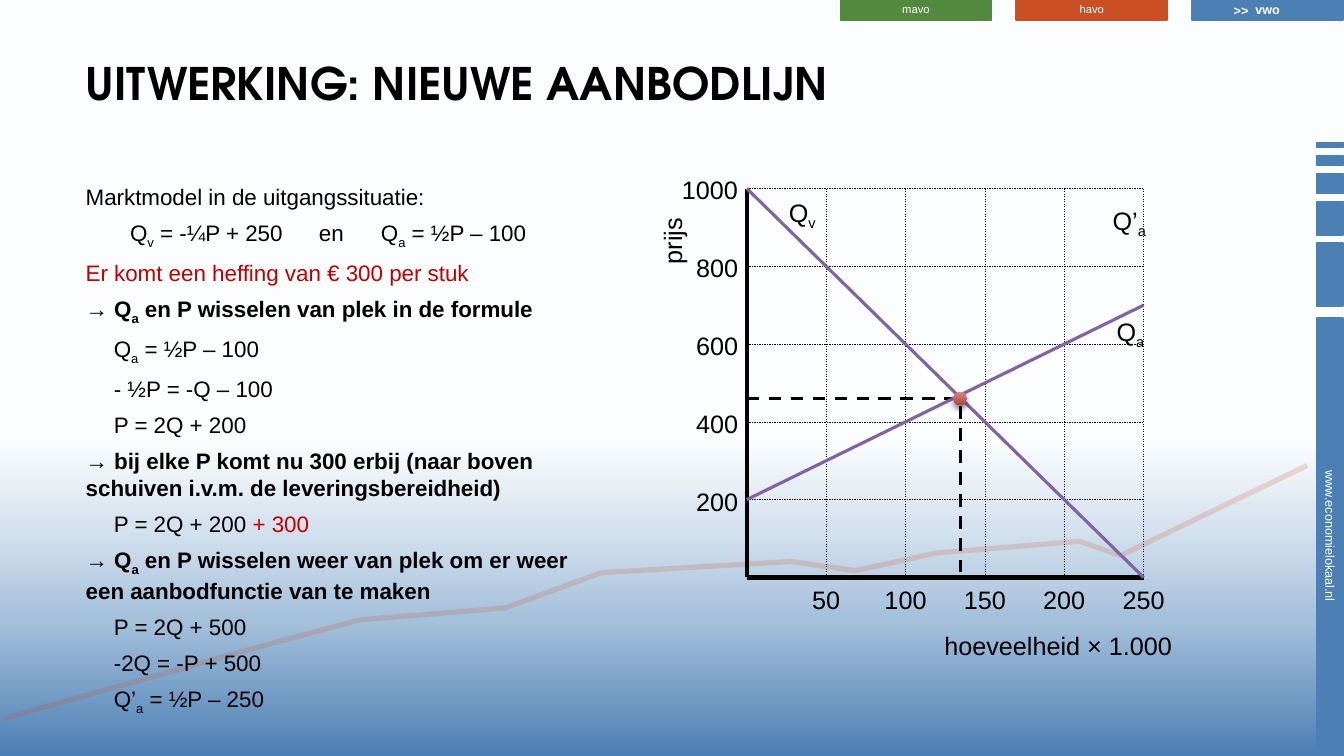
from lxml.etree import SubElement
from pptx import Presentation
from pptx.dml.color import RGBColor
from pptx.enum.dml import MSO_LINE
from pptx.enum.shapes import MSO_CONNECTOR, MSO_SHAPE
from pptx.enum.text import MSO_ANCHOR, PP_ALIGN
from pptx.oxml.ns import qn
from pptx.util import Cm, Pt

BLACK, WHITE, RED = "000000", "FFFFFF", "C00000"
BLUE, ORANGE, GREEN, PURPLE = "4C7FB4", "CA4F22", "52893F", "8064A2"

PLOT_LEFT, PLOT_BOTTOM, PLOT_WIDTH, PLOT_HEIGHT = 18.82, 14.55, 10, 9.8
MAX_QUANTITY, MAX_PRICE = 250, 1000
EQUILIBRIUM = (134.5, 460)

TREND = [(32.94, 11.73), (28.24, 14), (27.2, 13.64), (23.57, 13.94),
         (21.56, 14.38), (19.94, 14.15), (15.16, 14.43), (12.73, 15.32),
         (9.07, 15.62), (6.86, 16.21), (0.08, 18.11)]

# Each paragraph: tab stops in cm, bold, and its (text, colour) parts
INDENT = [0.71]
SOLUTION = [
    ([], False, [("Marktmodel in de uitgangssituatie:", BLACK)]),
    ([1.12, 5.88, 7.44], False,
     [("\tQ|v| = -¼P + 250\ten\tQ|a| = ½P – 100", BLACK)]),
    ([], False, [("Er komt een heffing van € 300 per stuk", RED)]),
    ([], True, [("→ Q|a| en P wisselen van plek in de formule", BLACK)]),
    (INDENT, False, [("\tQ|a| = ½P – 100", BLACK)]),
    (INDENT, False, [("\t- ½P = -Q – 100", BLACK)]),
    (INDENT, False, [("\tP = 2Q + 200", BLACK)]),
    ([], True, [("→ bij elke P komt nu 300 erbij (naar boven schuiven "
                 "i.v.m. de leveringsbereidheid)", BLACK)]),
    (INDENT, False, [("\tP = 2Q + 200 ", BLACK), ("+ 300", RED)]),
    ([], True, [("→ Q|a| en P wisselen weer van plek om er weer een "
                 "aanbodfunctie van te maken", BLACK)]),
    (INDENT, False, [("\tP = 2Q + 500", BLACK)]),
    (INDENT, False, [("\t-2Q = -P + 500", BLACK)]),
    (INDENT, False, [("\tQ’|a| = ½P – 250", BLACK)]),
]


def rgb(color):
    return RGBColor.from_string(color)


def set_gradient(fill, element, stops, angle):
    """Fill with (percent, colour) stops; the angle runs counter-clockwise."""
    fill.gradient()
    fill.gradient_angle = angle
    stop_list = next(element.iter(qn("a:gsLst")))
    for old in list(stop_list):
        stop_list.remove(old)
    for percent, color in stops:
        stop = SubElement(stop_list, qn("a:gs"), pos=str(percent * 1000))
        SubElement(stop, qn("a:srgbClr"), val=color)


def add_rich_text(p, text, size, color=BLACK, bold=False, font="Arial"):
    """Add runs; every second piece between bars is a subscript."""
    for i, piece in enumerate(text.split("|")):
        r = p.add_run()
        r.text = piece
        r.font.size, r.font.name, r.font.bold = Pt(size), font, bold
        r.font.color.rgb = rgb(color)
        if i % 2:
            r.font._element.set("baseline", "-25000")


def add_label(s, left, top, width, height, text, size=18, align=PP_ALIGN.LEFT,
              **style):
    box = s.shapes.add_textbox(Cm(left), Cm(top), Cm(width), Cm(height))
    box.text_frame.word_wrap = False
    p = box.text_frame.paragraphs[0]
    p.alignment = align
    add_rich_text(p, text, size, **style)
    return box


def add_bar(s, left, top, width, height, color, text="", size=9, bold=False):
    sp = s.shapes.add_shape(MSO_SHAPE.RECTANGLE, Cm(left), Cm(top), Cm(width),
                            Cm(height))
    sp.shadow.inherit = False
    sp.fill.solid()
    sp.fill.fore_color.rgb = sp.line.color.rgb = rgb(color)
    sp.line.width = Pt(1.25)
    if text:
        tf = sp.text_frame
        tf.margin_top, tf.margin_bottom = 0, Cm(0.03)
        tf.vertical_anchor = MSO_ANCHOR.MIDDLE
        tf.paragraphs[0].alignment = PP_ALIGN.CENTER
        add_rich_text(tf.paragraphs[0], text, size, WHITE, bold)
    return sp


def plot_point(quantity, price):
    return (PLOT_LEFT + quantity / MAX_QUANTITY * PLOT_WIDTH,
            PLOT_BOTTOM - price / MAX_PRICE * PLOT_HEIGHT)


def add_plot_line(s, start, end, color, width, dashed=False):
    """Draw a line between two (quantity, price) points."""
    ends = [Cm(v) for v in plot_point(*start) + plot_point(*end)]
    line = s.shapes.add_connector(MSO_CONNECTOR.STRAIGHT, *ends)
    line.line.color.rgb = rgb(color)
    line.line.width = Pt(width)
    if dashed:
        line.line.dash_style = MSO_LINE.DASH
    SubElement(line.element.spPr, qn("a:effectLst"))


def add_trend(s):
    points = [(Cm(x), Cm(y)) for x, y in TREND]
    builder = s.shapes.build_freeform(*points[0])
    builder.add_line_segments(points[1:], close=False)
    sp = builder.convert_to_shape()
    sp.shadow.inherit = False
    sp.fill.background()
    sp.line.color.rgb = rgb(ORANGE)
    sp.line.width = Pt(3.75)
    color = next(sp.element.spPr.iter(qn("a:srgbClr")))
    SubElement(color, qn("a:alpha"), val="19000")


def add_frame(s):
    """Draw the school-level tabs, the side bars and the trend line."""
    tabs = [("mavo", GREEN, 8, False), ("havo", ORANGE, 8, False),
            ("vwo", BLUE, 9, True)]
    for i, (text, color, size, bold) in enumerate(tabs):
        add_bar(s, 21.18 + 4.43 * i, 0, 3.81, 0.51, color, text, size, bold)
    top = 3.59
    for height in (0.13, 0.25, 0.51, 0.84, 1.6):
        add_bar(s, 33.18, top, 0.66, height, BLUE)
        top += height + 0.2
    address = add_bar(s, 28.01, 13.18, 11, 0.66, BLUE, "www.economielokaal.nl")
    address.rotation = 90
    add_trend(s)
    add_label(s, 30.84, -0.05, 0.9, 0.64, ">>", 9, color=WHITE, bold=True)


def add_solution(s):
    box = s.shapes.add_textbox(Cm(1.91), Cm(4.5), Cm(13.72), Cm(14))
    tf = box.text_frame
    tf.word_wrap = True
    for i, (tabs, bold, parts) in enumerate(SOLUTION):
        p = tf.paragraphs[0]
        if i:
            p = tf.add_paragraph()
            p.space_before = Pt(3.2)
        p.space_after = Pt(3.4)
        if tabs:
            tab_list = SubElement(p._p.get_or_add_pPr(), qn("a:tabLst"))
            for tab in tabs:
                SubElement(tab_list, qn("a:tab"), pos=str(Cm(tab)), algn="l")
        for text, color in parts:
            add_rich_text(p, text, 16, color, bold)


def add_equilibrium_dot(s):
    size = 0.34
    x, y = plot_point(*EQUILIBRIUM)
    dot = s.shapes.add_shape(MSO_SHAPE.OVAL, Cm(x - size / 2),
                             Cm(y - size / 2), Cm(size), Cm(size))
    set_gradient(dot.fill, dot.element, [(0, "E18785"), (100, "A7423F")], 270)
    dot.line.fill.background()
    effects = SubElement(dot.element.spPr, qn("a:effectLst"))
    shadow = SubElement(effects, qn("a:outerShdw"), blurRad=str(Pt(4)),
                        dist=str(Pt(3)), dir="5400000", rotWithShape="0")
    color = SubElement(shadow, qn("a:srgbClr"), val=BLACK)
    SubElement(color, qn("a:alpha"), val="46000")


def add_market_plot(s):
    add_plot_line(s, (0, MAX_PRICE), (0, 0), BLACK, 3)
    add_plot_line(s, (MAX_QUANTITY, 0), (0, 0), BLACK, 3)
    for price in range(200, MAX_PRICE + 1, 200):
        add_plot_line(s, (0, price), (MAX_QUANTITY, price), BLACK, 0.25, True)
        y = plot_point(0, price)[1]
        add_label(s, 16.85, y - 0.47, 2, 1.02, str(price),
                  align=PP_ALIGN.RIGHT)
    for quantity in range(50, MAX_QUANTITY + 1, 50):
        add_plot_line(s, (quantity, MAX_PRICE), (quantity, 0), BLACK, 0.25,
                      True)
        x = plot_point(quantity, 0)[0]
        add_label(s, x - 0.8, 14.61, 1.6, 1.02, str(quantity),
                  align=PP_ALIGN.CENTER)
    add_label(s, 23.55, 15.77, 6.3, 1.02, "hoeveelheid × 1.000")
    add_label(s, 16.1, 5.56, 1.68, 1.02, "prijs").rotation = 270

    add_plot_line(s, (0, MAX_PRICE), (MAX_QUANTITY, 0), PURPLE, 2.25)
    for left, top, text in [(19.63, 4.85, "Q|v"), (27.89, 7.85, "Q|a"),
                            (27.79, 5.05, "Q’|a")]:
        add_label(s, left, top, 1.8, 1.02, text)
    quantity, price = EQUILIBRIUM
    add_plot_line(s, (0, price), EQUILIBRIUM, BLACK, 2.25, True)
    add_plot_line(s, (quantity, price - 20), (quantity, 0), BLACK, 2.25, True)
    add_plot_line(s, (0, 200), (MAX_QUANTITY, 700), PURPLE, 2.25)
    add_equilibrium_dot(s)


def main():
    prs = Presentation()
    prs.slide_width, prs.slide_height = Cm(33.87), Cm(19.05)
    s = prs.slides.add_slide(prs.slide_layouts[6])
    set_gradient(s.background.fill, s.element,
                 [(0, BLUE), (18, "A5C0DB"), (30, "D4E1EE"), (42, "FCFDFE"),
                  (50, WHITE)], 90)
    add_frame(s)
    add_label(s, 1.91, 1.27, 25.45, 2.26, "UITWERKING: NIEUWE AANBODLIJN", 32,
              bold=True, font="TeX Gyre Adventor")
    add_solution(s)
    add_market_plot(s)
    prs.save("out.pptx")


if __name__ == "__main__":
    main()
